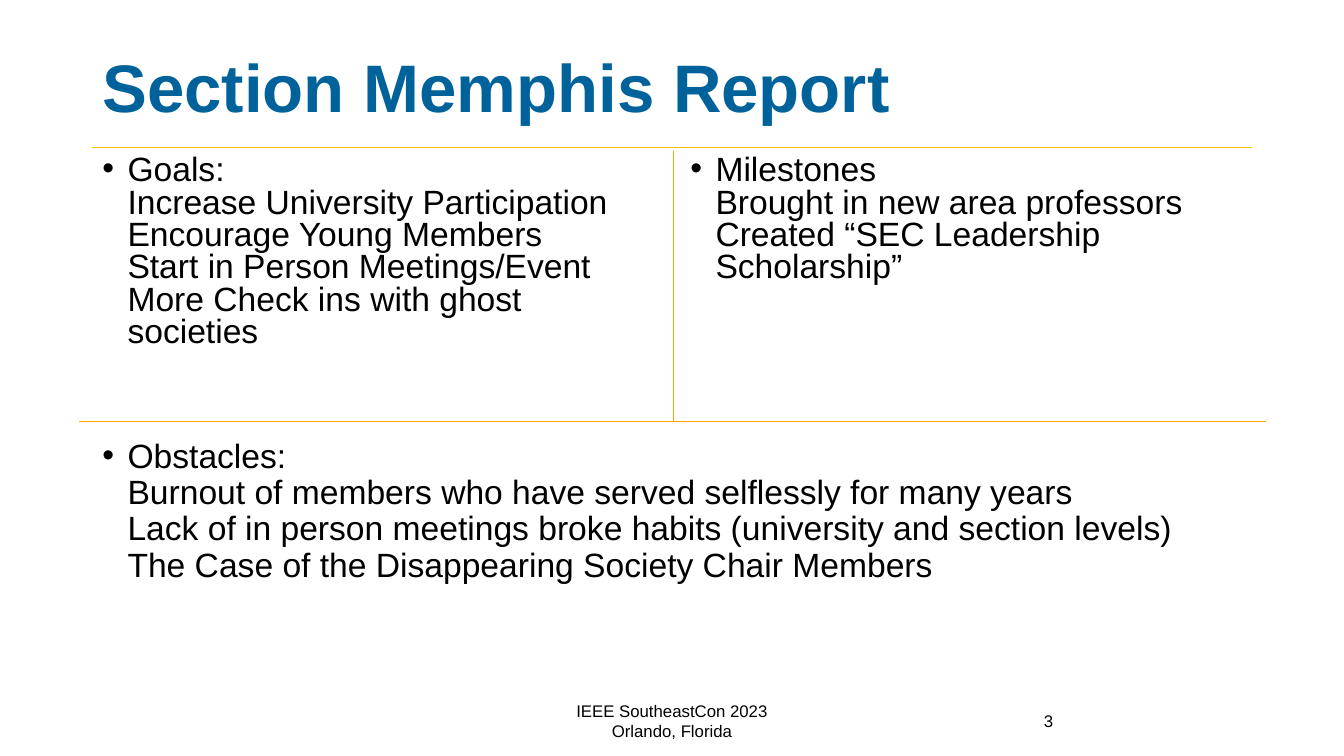
from dataclasses import dataclass
from pptx import Presentation
from pptx.dml.color import RGBColor as Rgb
from pptx.enum.shapes import MSO_CONNECTOR as Link
from pptx.enum.text import MSO_ANCHOR as Anchor, PP_ALIGN as Align
from pptx.oxml.ns import qn
from pptx.util import Inches, Pt
from lxml.etree import SubElement as Sub


@dataclass
class Theme:
    font: str = "Arial"
    blue: str = "00629B"
    black: str = "000000"
    gold: str = "F6BE07"
    amber: str = "FFA300"
    head: int = 48
    body: int = 24
    foot: int = 12


theme = Theme()
deck = Presentation()
deck.slide_width, deck.slide_height = Inches(13.33), Inches(7.5)
slide = deck.slides.add_slide(deck.slide_layouts[6])
col = deck.slide_width / 160
row = deck.slide_height / 90
left, right = 11, 149
top, split, base = 18, 50.2, 83.4
wide = right - left
half = 68


def add_text(grid, paras, size, color=theme.black, bold=False,
             anchor=Anchor.MIDDLE, align=Align.LEFT, space=1.0):
    x, y, w, h = grid
    box = slide.shapes.add_textbox(
        round(x * col), round(y * row), round(w * col), round(h * row))
    frame = box.text_frame
    frame.word_wrap = True
    frame.vertical_anchor = anchor
    frame.text = "\n".join(paras)
    for para in frame.paragraphs:
        para.alignment = align
        para.line_spacing = space
        for run in para.runs:
            font = run.font
            font.name, font.size, font.bold = theme.font, Pt(size), bold
            font.color.rgb = Rgb.from_string(color)
    return frame


def add_line(x1, y1, x2, y2, color, width):
    line = slide.shapes.add_connector(
        Link.STRAIGHT, round(x1 * col), round(y1 * row),
        round(x2 * col), round(y2 * row))
    line.line.color.rgb = Rgb.from_string(color)
    line.line.width = Pt(width)
    Sub(line._element.spPr, qn("a:effectLst"))


add_line(left, 17.5, right, 17.5, theme.gold, 0.5)
add_text((left, 4.8, 123, 12), ["Section Memphis Report"],
         theme.head, theme.blue, bold=True, space=0.9)

panels = [
    ((left, top, half, 27), 0.8, [
        "Goals:",
        "Increase University Participation",
        "Encourage Young Members",
        "Start in Person Meetings/Event",
        "More Check ins with ghost societies"]),
    ((right - half, top, half, 29.2), 0.8, [
        "Milestones",
        "Brought in new area professors",
        "Created “SEC Leadership Scholarship”"]),
    ((left, 51.7, wide, 27), 0.9, [
        "Obstacles:",
        "Burnout of members who have served selflessly for many years",
        "Lack of in person meetings broke habits (university and section levels)",
        "The Case of the Disappearing Society Chair Members"]),
]
for grid, space, lines in panels:
    frame = add_text(grid, ["\v".join(lines)], theme.body,
                     anchor=Anchor.TOP, space=space)
    props = frame.paragraphs[0]._p.get_or_add_pPr()
    props.set("marL", str(Inches(0.25)))
    props.set("indent", str(-Inches(0.25)))
    Sub(props, qn("a:buFont")).set("typeface", theme.font)
    Sub(props, qn("a:buChar")).set("char", "•")

add_text((53, base, 54, 4.8), ["IEEE SoutheastCon 2023", "Orlando, Florida"],
         theme.foot, align=Align.CENTER)
add_text((123.1, base, 25.9, 4.8), ["3"], theme.foot)

add_line(80.2, top, 80.2, split, theme.amber, 1)
add_line(9.4, split, 150.7, split, theme.amber, 1)

deck.save("out.pptx")
